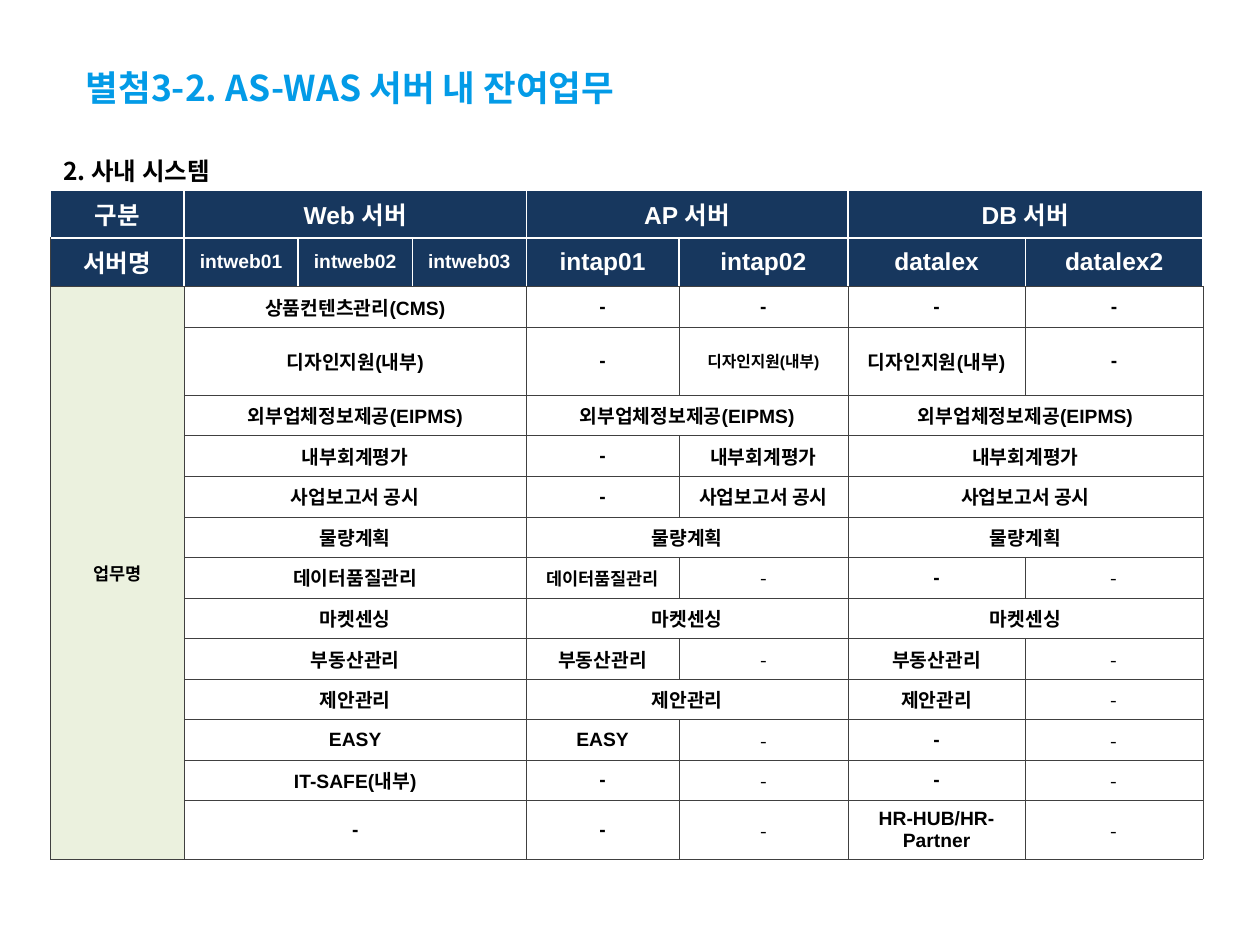
from lxml.etree import SubElement
from pptx import Presentation
from pptx.dml.color import RGBColor as RGB
from pptx.enum.text import MSO_ANCHOR as Anchor, MSO_AUTO_SIZE as Fit, PP_ALIGN as Align
from pptx.oxml.ns import qn
from pptx.util import Pt

TITLE = "별첨3-2. AS-WAS 서버 내 잔여업무"
HEADING = "2. 사내 시스템"

# None continues the cell to its left
HEAD = [
    ("구분", "Web 서버", None, None, "AP 서버", None, "DB 서버", None),
    ("서버명", "intweb01", "intweb02", "intweb03", "intap01", "intap02", "datalex", "datalex2"),
]
SIDE = "업무명"
# web, intap01, intap02, datalex, datalex2
TASKS = [
    ("상품컨텐츠관리(CMS)", "-", "-", "-", "-"),
    ("디자인지원(내부)", "-", "디자인지원(내부)", "디자인지원(내부)", "-"),
    ("외부업체정보제공(EIPMS)", "외부업체정보제공(EIPMS)", None, "외부업체정보제공(EIPMS)", None),
    ("내부회계평가", "-", "내부회계평가", "내부회계평가", None),
    ("사업보고서 공시", "-", "사업보고서 공시", "사업보고서 공시", None),
    ("물량계획", "물량계획", None, "물량계획", None),
    ("데이터품질관리", "데이터품질관리", "-", "-", "-"),
    ("마켓센싱", "마켓센싱", None, "마켓센싱", None),
    ("부동산관리", "부동산관리", "-", "부동산관리", "-"),
    ("제안관리", "제안관리", None, "제안관리", "-"),
    ("EASY", "EASY", "-", "-", "-"),
    ("IT-SAFE(내부)", "-", "-", "-", "-"),
    ("-", "-", "-", "HR-HUB/HR-Partner", "-"),
]
ROWS = HEAD + [(None, web, None, None, *rest) for web, *rest in TASKS]

COLS = [76.4, 65.2, 65.2, 65.2, 87.2, 96.5, 101.5, 101.5]
HIGH = [27.5] * 2 + [23.4, 38.9] + [23.17] * 10 + [32.2]
SIZES = {(3, 5): 9, (8, 4): 10}
PLAIN_ROW, PLAIN_COLS = 8, (5, 7)
COLOR = {"title": "039BE7", "text": "000000", "head": "17375E",
         "side": "EBF1DE", "white": "FFFFFF", "grid": "404040"}
LATIN, KOREAN = "Arial", "Noto Sans CJK KR"
NO_STYLE = "{2D5ABB26-0587-4C30-8999-92F81FD0307C}"
THICK, THIN = ("white", 1), ("grid", 0.25)


def write(frame, text, size, color, name=KOREAN, bold=True, align=Align.LEFT):
    para = frame.paragraphs[0]
    para.alignment = align
    run = para.add_run()
    run.text = text
    for key, value in {"size": Pt(size), "bold": bold, "name": name}.items():
        setattr(run.font, key, value)
    run.font.color.rgb = RGB.from_string(COLOR[color])
    SubElement(run.font._element, qn("a:ea"), typeface=KOREAN)
    return para


def edge(cell, sides):
    """Draw the borders, given as left, right, top, bottom."""
    props = cell._tc.get_or_add_tcPr()
    for side, (color, width) in zip("LRTB", sides):
        line = SubElement(props, qn(f"a:ln{side}"), w=str(Pt(width)))
        fill = SubElement(line, qn("a:solidFill"))
        SubElement(fill, qn("a:srgbClr"), val=COLOR[color])


def style(cell, row, col):
    if row == 0:
        sides = [THICK] * 4
    elif row == 1:
        sides = [THICK if col else THIN, THICK, THICK, THIN]
    else:
        sides = [THIN] * 4
    edge(cell, sides)
    if row < 2 or col == 0:
        cell.fill.solid()
        cell.fill.fore_color.rgb = RGB.from_string(COLOR["head" if row < 2 else "side"])
    else:
        cell.fill.background()
    cell.vertical_anchor = Anchor.MIDDLE


def fill_cell(cell, text, row, col):
    if row < 2:
        size, color = 11 if row == 1 and 1 <= col <= 3 else 14, "white"
    else:
        size, color = SIZES.get((row, col), 11), "text"
    plain = text == "-" and row >= PLAIN_ROW and col in PLAIN_COLS
    write(cell.text_frame, text, size, color, KOREAN if plain else LATIN,
          not plain, Align.CENTER)


def build_table(slide):
    shape = slide.shapes.add_table(len(ROWS), len(COLS), Pt(28.8), Pt(108.5),
                                   Pt(sum(COLS)), Pt(sum(HIGH)))
    table = shape.table
    table.first_row = table.horz_banding = False
    table._tbl.tblPr[0].text = NO_STYLE
    for col, width in zip(table.columns, COLS):
        col.width = Pt(width)
    for row, height in zip(table.rows, HIGH):
        row.height = Pt(height)

    for r, texts in enumerate(ROWS):
        for c, text in enumerate(texts):
            cell = table.cell(r, c)
            style(cell, r, c)
            if text is None:
                continue
            fill_cell(cell, text, r, c)
            last = c
            while last + 1 < len(texts) and texts[last + 1] is None:
                last += 1
            if last > c:
                cell.merge(table.cell(r, last))

    side = table.cell(len(HEAD), 0)
    side.merge(table.cell(len(ROWS) - 1, 0))
    for key, value in {"left": 0.7, "right": 0.7, "top": 0.7, "bottom": 0}.items():
        setattr(side, f"margin_{key}", Pt(value))
    write(side.text_frame, SIDE, 10, "text", LATIN, align=Align.CENTER)


def main():
    deck = Presentation()
    deck.slide_width, deck.slide_height = Pt(720), Pt(540)
    slide = deck.slides.add_slide(deck.slide_layouts[5])

    title = slide.shapes.title
    place = {"left": 49, "top": 33.1, "width": 607.7, "height": 33.8}
    for key, value in place.items():
        setattr(title, key, Pt(value))
    frame = title.text_frame
    frame.margin_left = 0
    frame.vertical_anchor = Anchor.MIDDLE
    frame.auto_size = Fit.NONE
    write(frame, TITLE, 20.3, "title")

    box = slide.shapes.add_textbox(Pt(29.1), Pt(83.2), Pt(132.5), Pt(28.1))
    box.text_frame.word_wrap = True
    write(box.text_frame, HEADING, 14, "text").line_spacing = 1.15

    build_table(slide)
    deck.save("out.pptx")


if __name__ == "__main__":
    main()
